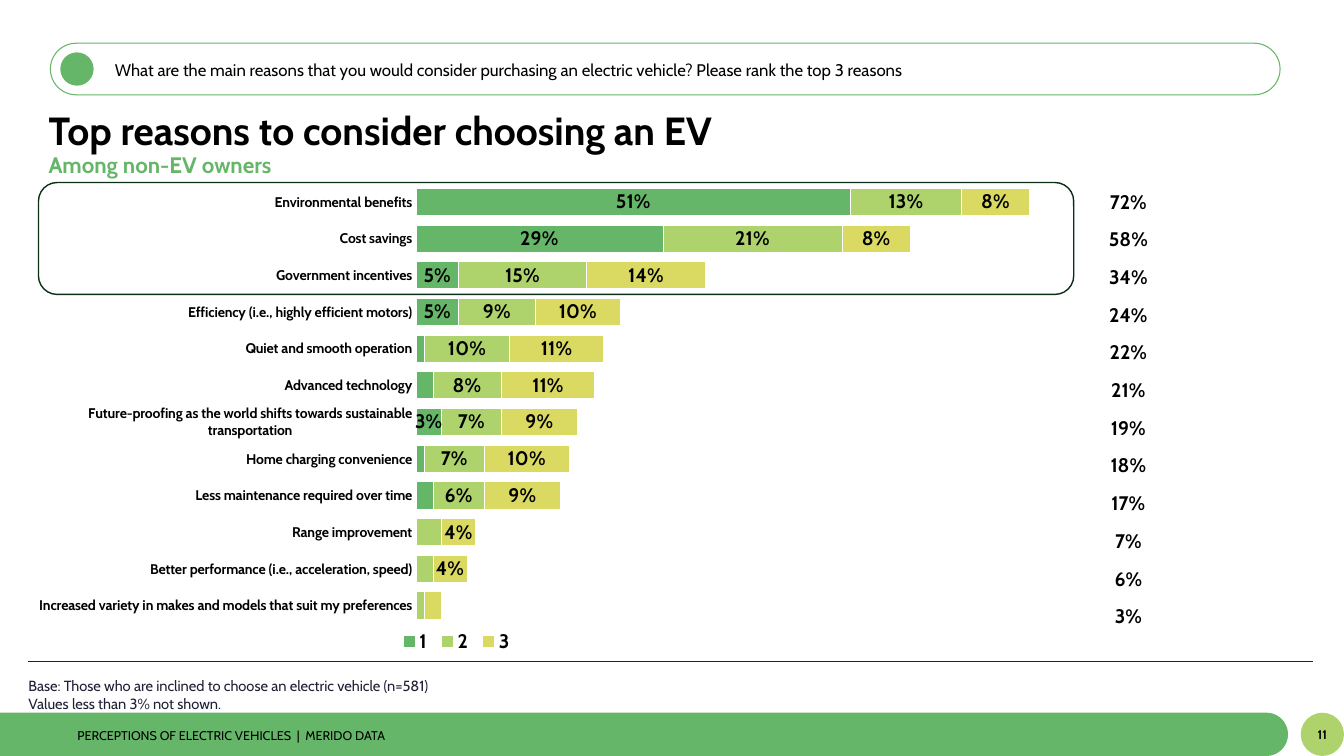
import math

import lxml.etree
import pptx
import pptx.chart.data
import pptx.dml.color
import pptx.enum.chart
import pptx.enum.shapes
import pptx.enum.text
import pptx.oxml
import pptx.oxml.ns
import pptx.util

Cm, Pt = pptx.util.Cm, pptx.util.Pt
qn = pptx.oxml.ns.qn
SHAPE = pptx.enum.shapes.MSO_SHAPE
ALIGN = pptx.enum.text.PP_ALIGN
ANCHOR = pptx.enum.text.MSO_ANCHOR

FONT = "Cabin"
COLORS = {"green": "65B668", "lime": "AED36D", "yellow": "DADA62", "black": "000000",
          "white": "FFFFFF", "navy": "202036", "forest": "0B2E18"}

QUESTION = ("What are the main reasons that you would consider purchasing an electric vehicle? "
            "Please rank the top 3 reasons")
HEADING = "Top reasons to consider choosing an EV"
SUBHEADING = "Among non-EV owners"
NOTES = ["Base: Those who are inclined to choose an electric vehicle (n=581)",
         "Values less than 3% not shown."]
FOOTER = "PERCEPTIONS OF ELECTRIC VEHICLES  |  MERIDO DATA"
PAGE_NUMBER = "11"

# reason, shares ranking it 1, 2 and 3, total
REASONS = [
    ("Environmental benefits", 0.51, 0.13, 0.08, "72%"),
    ("Cost savings", 0.29, 0.21, 0.08, "58%"),
    ("Government incentives", 0.05, 0.15, 0.14, "34%"),
    ("Efficiency (i.e., highly efficient motors)", 0.05, 0.09, 0.10, "24%"),
    ("Quiet and smooth operation", 0.01, 0.10, 0.11, "22%"),
    ("Advanced technology", 0.02, 0.08, 0.11, "21%"),
    ("Future-proofing as the world shifts towards sustainable transportation",
     0.03, 0.07, 0.09, "19%"),
    ("Home charging convenience", 0.01, 0.07, 0.10, "18%"),
    ("Less maintenance required over time", 0.02, 0.06, 0.09, "17%"),
    ("Range improvement", None, 0.03, 0.04, "7%"),
    ("Better performance (i.e., acceleration, speed)", None, 0.02, 0.04, "6%"),
    ("Increased variety in makes and models that suit my preferences",
     None, 0.01, 0.02, "3%"),
]
# rank, colour, rows whose label is hidden
RANKS = [("1", "green", (4, 5, 7, 8)), ("2", "lime", (9, 10, 11)), ("3", "yellow", (11,))]

SLIDE_WIDTH, SLIDE_HEIGHT = 33.87, 19.05
BAR_HEIGHT, BAR_RIGHT = 1.09, 32.46
BAR_TOP = SLIDE_HEIGHT - BAR_HEIGHT
ROW_HEIGHT = 0.95


def rgb(name):
    return pptx.dml.color.RGBColor.from_string(COLORS[name])


def box(left, top, width, height):
    return Cm(left), Cm(top), Cm(width), Cm(height)


def set_font(font, size, color="black", bold=False):
    for name, value in {"name": FONT, "size": Pt(size), "bold": bold}.items():
        setattr(font, name, value)
    font.color.rgb = rgb(color)


def write(frame, lines, align=ALIGN.LEFT, anchor=ANCHOR.MIDDLE, spacing=1.0):
    """Fill a text frame with (text, size, colour, bold) lines, without bullets."""
    for name, value in {"word_wrap": True, "vertical_anchor": anchor,
                        "auto_size": pptx.enum.text.MSO_AUTO_SIZE.NONE}.items():
        setattr(frame, name, value)
    for index, (text, *style) in enumerate(lines):
        paragraph = frame.paragraphs[0] if index == 0 else frame.add_paragraph()
        properties = paragraph._p.get_or_add_pPr()
        properties.set("marL", "0")
        properties.set("indent", "0")
        lxml.etree.SubElement(properties, qn("a:buNone"))
        for name, value in {"alignment": align, "line_spacing": spacing,
                            "space_before": Pt(0), "space_after": Pt(0)}.items():
            setattr(paragraph, name, value)
        run = paragraph.add_run()
        run.text = text
        set_font(run.font, *style)


def paint(shape, fill=None, line=None, width=0.75):
    shape.shadow.inherit = False
    for part, color in ((shape.fill, fill), (shape.line.fill, line)):
        if color:
            part.solid()
            part.fore_color.rgb = rgb(color)
        else:
            part.background()
    if line:
        shape.line.width = Pt(width)


def add_shape(shapes, kind, place, **colors):
    shape = shapes.add_shape(kind, *box(*place))
    paint(shape, **colors)
    return shape


def set_layout(parent, index, inner=False, **fractions):
    """Place a plot area or legend by fractions of the chart."""
    for old in parent.findall(qn("c:layout")):
        parent.remove(old)
    layout = lxml.etree.Element(qn("c:layout"))
    manual = lxml.etree.SubElement(layout, qn("c:manualLayout"))
    settings = {"layoutTarget": "inner"} if inner else {}
    settings.update({"xMode": "edge", "yMode": "edge"}, **fractions)
    for name, value in settings.items():
        lxml.etree.SubElement(manual, qn("c:" + name)).set("val", str(value))
    parent.insert(index, layout)


def add_footer(shapes):
    radius = BAR_HEIGHT / 2
    angles = [math.radians(angle) for angle in range(-90, 91, 5)]
    cap = [(Cm(BAR_RIGHT - radius + radius * math.cos(angle)),
            Cm(BAR_TOP + radius + radius * math.sin(angle))) for angle in angles]
    builder = shapes.build_freeform(Cm(0), Cm(BAR_TOP))
    builder.add_line_segments(cap + [(Cm(0), Cm(SLIDE_HEIGHT))], close=True)
    paint(builder.convert_to_shape(), fill="green")
    circle = add_shape(shapes, SHAPE.OVAL,
                       (SLIDE_WIDTH - BAR_HEIGHT, BAR_TOP, BAR_HEIGHT, BAR_HEIGHT), fill="lime")
    frame = circle.text_frame
    frame.margin_left = frame.margin_right = 0
    write(frame, [(PAGE_NUMBER, 9, "black", True)], align=ALIGN.CENTER)
    label = shapes.add_textbox(*box(1.7, 18.26, 24.31, 0.53))
    write(label.text_frame, [(FOOTER, 9)])


def add_reasons_chart(shapes):
    data = pptx.chart.data.CategoryChartData(number_format="0%")
    data.categories = [reason[0] for reason in REASONS]
    for column, (rank, _, _) in enumerate(RANKS, start=1):
        data.add_series(rank, [reason[column] for reason in REASONS])
    enums = pptx.enum.chart
    chart = shapes.add_chart(enums.XL_CHART_TYPE.BAR_STACKED,
                             *box(0.97, 4.42, 30.99, 12.22), data).chart
    set_font(chart.font, 16, bold=True)
    chart.has_title = False
    chart.has_legend = True
    chart.legend.position = enums.XL_LEGEND_POSITION.BOTTOM
    chart.legend.include_in_layout = False
    set_font(chart.legend.font, 14, bold=True)
    set_layout(chart.legend._element, 1, x=0.29, y=0.94, w=0.1, h=0.06)
    set_layout(chart._chartSpace.chart.plotArea, 0, inner=True, x=0.307, y=0.017, w=0.693, h=0.908)

    axis = chart.category_axis
    axis.reverse_order = True
    axis.major_tick_mark = axis.minor_tick_mark = enums.XL_TICK_MARK.NONE
    axis.format.line.fill.background()
    set_font(axis.tick_labels.font, 10, bold=True)
    for name, value in {"visible": False, "has_major_gridlines": False,
                        "minimum_scale": 0, "maximum_scale": 1}.items():
        setattr(chart.value_axis, name, value)

    plot = chart.plots[0]
    for name, value in {"gap_width": 35, "overlap": 100, "vary_by_categories": False}.items():
        setattr(plot, name, value)
    for series, (_, color, hidden_rows) in zip(plot.series, RANKS):
        series.format.fill.solid()
        series.format.fill.fore_color.rgb = rgb(color)
        series.format.line.color.rgb = rgb("white")
        series.format.line.width = Pt(0.75)
        labels = series.data_labels
        for name, value in {"show_value": True, "number_format": "0%",
                            "number_format_is_linked": False,
                            "position": enums.XL_LABEL_POSITION.CENTER}.items():
            setattr(labels, name, value)
        set_font(labels.font, 14, bold=True)
        for position, row in enumerate(hidden_rows):
            label = lxml.etree.Element(qn("c:dLbl"))
            lxml.etree.SubElement(label, qn("c:idx")).set("val", str(row))
            lxml.etree.SubElement(label, qn("c:delete")).set("val", "1")
            labels._element.insert(position, label)


def add_totals_table(shapes):
    count = len(REASONS)
    table = shapes.add_table(count, 1, *box(27.56, 4.6, 1.75, count * ROW_HEIGHT)).table
    table.first_row = table.horz_banding = False
    for row, reason in zip(table.rows, REASONS):
        row.height = Cm(ROW_HEIGHT)
        cell = row.cells[0]
        for name, value in {"margin_left": Cm(0.03), "margin_right": Cm(0.03),
                            "margin_top": Cm(0.03), "margin_bottom": 0,
                            "vertical_anchor": ANCHOR.MIDDLE}.items():
            setattr(cell, name, value)
        paragraph = cell.text_frame.paragraphs[0]
        paragraph.text = reason[-1]
        paragraph.alignment = ALIGN.CENTER
        set_font(paragraph.runs[0].font, 14, bold=True)
        properties = cell._tc.get_or_add_tcPr()
        for side in ("lnL", "lnR", "lnT", "lnB"):
            border = lxml.etree.SubElement(properties, qn("a:" + side), w=str(Pt(1)))
            fill = lxml.etree.SubElement(border, qn("a:solidFill"))
            lxml.etree.SubElement(fill, qn("a:srgbClr"), val=COLORS["white"])
        cell.fill.background()


def main():
    presentation = pptx.Presentation()
    presentation.slide_width, presentation.slide_height = Cm(SLIDE_WIDTH), Cm(SLIDE_HEIGHT)
    slide = presentation.slides.add_slide(presentation.slide_layouts.get_by_name("Two Content"))
    shapes = slide.shapes
    heading, question, notes = slide.placeholders
    for placeholder, place in ((heading, (0.97, 2.9, 30.99, 1.52)),
                               (question, (2.64, 1.37, 29.31, 0.76)),
                               (notes, (0.46, 16.94, 26.82, 0.84))):
        placeholder.left, placeholder.top, placeholder.width, placeholder.height = box(*place)
    write(heading.text_frame, [(HEADING, 28, "black", True), (SUBHEADING, 16, "green", True)],
          spacing=0.9)
    write(question.text_frame, [(QUESTION, 12)])
    write(notes.text_frame, [(note, 10.5, "navy") for note in NOTES], anchor=ANCHOR.TOP)

    add_footer(shapes)
    pill = add_shape(shapes, SHAPE.ROUNDED_RECTANGLE, (1.27, 1.09, 30.99, 1.3), line="green")
    pill.adjustments[0] = 0.5
    add_shape(shapes, SHAPE.OVAL, (1.52, 1.32, 0.84, 0.84), fill="green")
    rule = shapes.add_connector(pptx.enum.shapes.MSO_CONNECTOR.STRAIGHT,
                                Cm(0.71), Cm(16.66), Cm(33.1), Cm(16.66))
    rule.line.color.rgb = rgb("navy")
    rule.line.width = Pt(0.5)
    lxml.etree.SubElement(rule._element.spPr, qn("a:effectLst"))

    add_reasons_chart(shapes)
    add_totals_table(shapes)
    add_shape(shapes, SHAPE.ROUNDED_RECTANGLE, (0.97, 4.6, 26.09, 2.82), line="forest", width=1)
    presentation.save("out.pptx")


if __name__ == "__main__":
    main()
